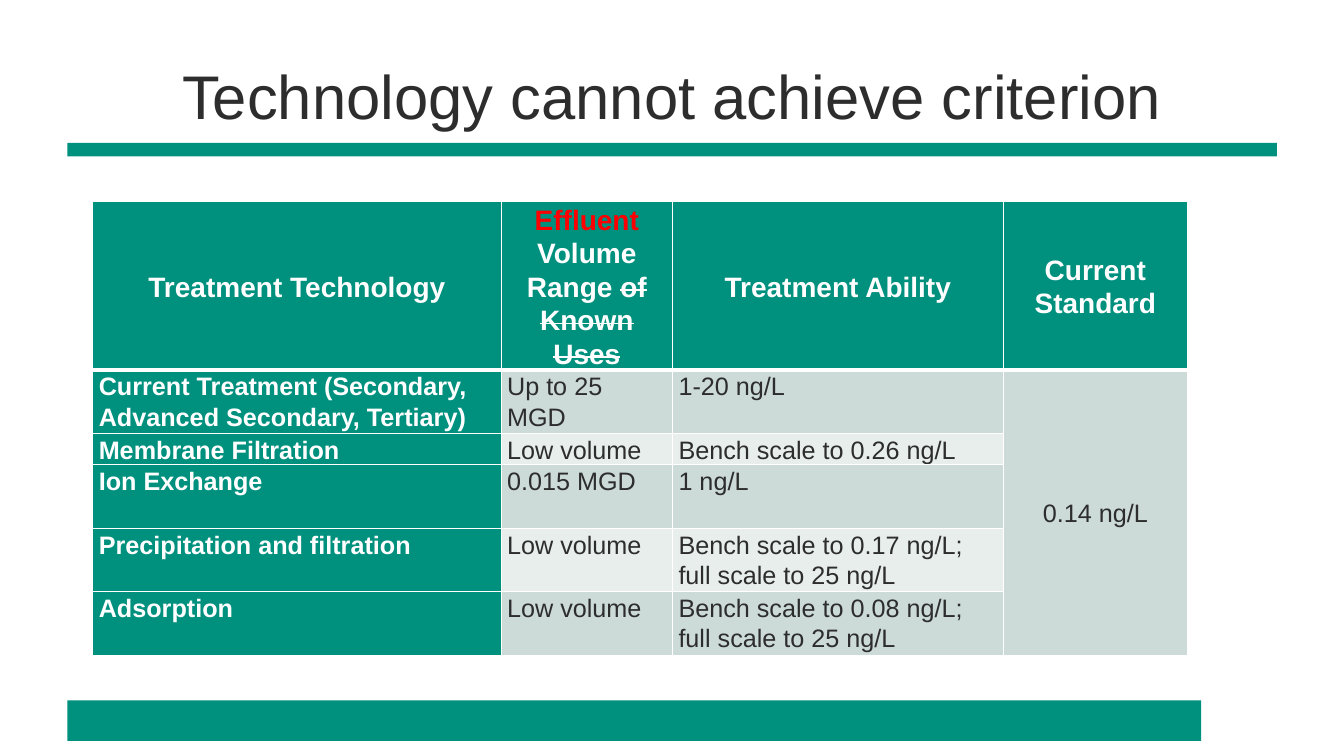
from lxml.etree import SubElement
from pptx import Presentation
from pptx.dml.color import RGBColor
from pptx.enum.shapes import MSO_SHAPE
from pptx.enum.text import MSO_ANCHOR, MSO_AUTO_SIZE, PP_ALIGN
from pptx.oxml.ns import qn
from pptx.util import Cm, Pt

GREEN = RGBColor(0x00, 0x90, 0x7E)
DARK = RGBColor(0x2D, 0x2D, 0x2D)
WHITE = RGBColor(0xFF, 0xFF, 0xFF)
RED = RGBColor(0xFF, 0x00, 0x00)
BAND_DARK = RGBColor(0xCC, 0xDB, 0xD8)
BAND_LIGHT = RGBColor(0xE7, 0xEE, 0xEC)
FONT = "Arial"

TITLE = "Technology cannot achieve criterion"
# Each header is a list of runs: text, colour, struck through
HEADERS = [
    [("Treatment Technology", WHITE, False)],
    [("Effluent ", RED, False), ("Volume Range ", WHITE, False),
     ("of Known Uses", WHITE, True)],
    [("Treatment Ability", WHITE, False)],
    [("Current Standard", WHITE, False)],
]
TREATMENTS = [
    ("Current Treatment (Secondary, Advanced Secondary, Tertiary)",
     "Up to 25 MGD", ["1-20 ng/L"]),
    ("Membrane Filtration", "Low volume", ["Bench scale to 0.26 ng/L"]),
    ("Ion Exchange", "0.015 MGD", ["1 ng/L"]),
    ("Precipitation and filtration", "Low volume",
     ["Bench scale to 0.17 ng/L;", "full scale to 25 ng/L"]),
    ("Adsorption", "Low volume",
     ["Bench scale to 0.08 ng/L;", "full scale to 25 ng/L"]),
]
STANDARD = "0.14 ng/L"

# Left, top, width, height in cm
BARS = [(1.7, 3.6, 30.48, 0.34), (1.7, 17.65, 28.57, 1.02)]
TITLE_AREA = (1.7, 0.84, 30.48, 3.1)
TABLE_LEFT, TABLE_TOP = 2.34, 5.08
COLUMN_WIDTHS = [10.29, 4.32, 8.33, 4.65]
ROW_HEIGHTS = [4.22, 1.6, 0.79, 1.6, 1.6, 1.6]


def add_run(para, text, size, color, bold=False, struck=False):
    span = para.add_run()
    span.text = text
    span.font.name = FONT
    span.font.size = Pt(size)
    span.font.color.rgb = color
    span.font.bold = bold
    if struck:
        span._r.get_or_add_rPr().set("strike", "sngStrike")


def add_borders(cell, bottom):
    """White lines on all four sides; bottom is that line's width in points."""
    properties = cell._tc.get_or_add_tcPr()
    for side, width in (("L", 1), ("R", 1), ("T", 1), ("B", bottom)):
        line = SubElement(properties, qn(f"a:ln{side}"), w=str(Pt(width)))
        fill = SubElement(line, qn("a:solidFill"))
        SubElement(fill, qn("a:srgbClr"), val=str(WHITE))


def fill_cell(cell, paragraphs, size, fill, bold=False, centered=False, bottom=1):
    """Format a cell; each paragraph is a list of (text, colour, struck) runs."""
    add_borders(cell, bottom)
    cell.fill.solid()
    cell.fill.fore_color.rgb = fill
    cell.margin_left = cell.margin_right = Cm(0.15)
    cell.margin_top, cell.margin_bottom = Cm(0.03), Cm(0)
    cell.vertical_anchor = MSO_ANCHOR.MIDDLE if centered else MSO_ANCHOR.TOP
    frame = cell.text_frame
    for index, runs in enumerate(paragraphs):
        para = frame.add_paragraph() if index else frame.paragraphs[0]
        para.alignment = PP_ALIGN.CENTER if centered else PP_ALIGN.LEFT
        para.line_spacing = 1.07
        for text, color, struck in runs:
            add_run(para, text, size, color, bold, struck)


def add_bars(page):
    for area in BARS:
        bar = page.shapes.add_shape(MSO_SHAPE.RECTANGLE, *map(Cm, area))
        bar.shadow.inherit = False
        bar.fill.solid()
        bar.fill.fore_color.rgb = GREEN
        bar.line.fill.background()


def add_title(page):
    title = page.shapes.title
    title.left, title.top, title.width, title.height = map(Cm, TITLE_AREA)
    frame = title.text_frame
    frame.word_wrap = True
    frame.auto_size = MSO_AUTO_SIZE.NONE
    frame.vertical_anchor = MSO_ANCHOR.MIDDLE
    para = frame.paragraphs[0]
    para.alignment = PP_ALIGN.CENTER
    add_run(para, TITLE, 44, DARK)


def add_treatment_table(page):
    table = page.shapes.add_table(
        len(ROW_HEIGHTS), len(COLUMN_WIDTHS), Cm(TABLE_LEFT), Cm(TABLE_TOP),
        Cm(sum(COLUMN_WIDTHS)), Cm(sum(ROW_HEIGHTS))).table
    for column, width in zip(table.columns, COLUMN_WIDTHS):
        column.width = Cm(width)
    for row, height in zip(table.rows, ROW_HEIGHTS):
        row.height = Cm(height)

    for column, runs in enumerate(HEADERS):
        fill_cell(table.cell(0, column), [runs], 20, GREEN,
                  bold=True, centered=True, bottom=3)
    for row, (technology, volume, ability) in enumerate(TREATMENTS, 1):
        band = BAND_DARK if row % 2 else BAND_LIGHT
        fill_cell(table.cell(row, 0), [[(technology, WHITE, False)]], 18, GREEN,
                  bold=True)
        fill_cell(table.cell(row, 1), [[(volume, DARK, False)]], 18, band)
        fill_cell(table.cell(row, 2), [[(line, DARK, False)] for line in ability],
                  18, band)

    standard = table.cell(1, 3)
    standard.merge(table.cell(len(TREATMENTS), 3))
    fill_cell(standard, [[(STANDARD, DARK, False)]], 18, BAND_DARK, centered=True)


def main():
    deck = Presentation()
    deck.slide_width, deck.slide_height = Cm(33.87), Cm(19.05)
    page = deck.slides.add_slide(deck.slide_layouts[5])
    add_bars(page)
    add_title(page)
    add_treatment_table(page)
    deck.save("out.pptx")


if __name__ == "__main__":
    main()
